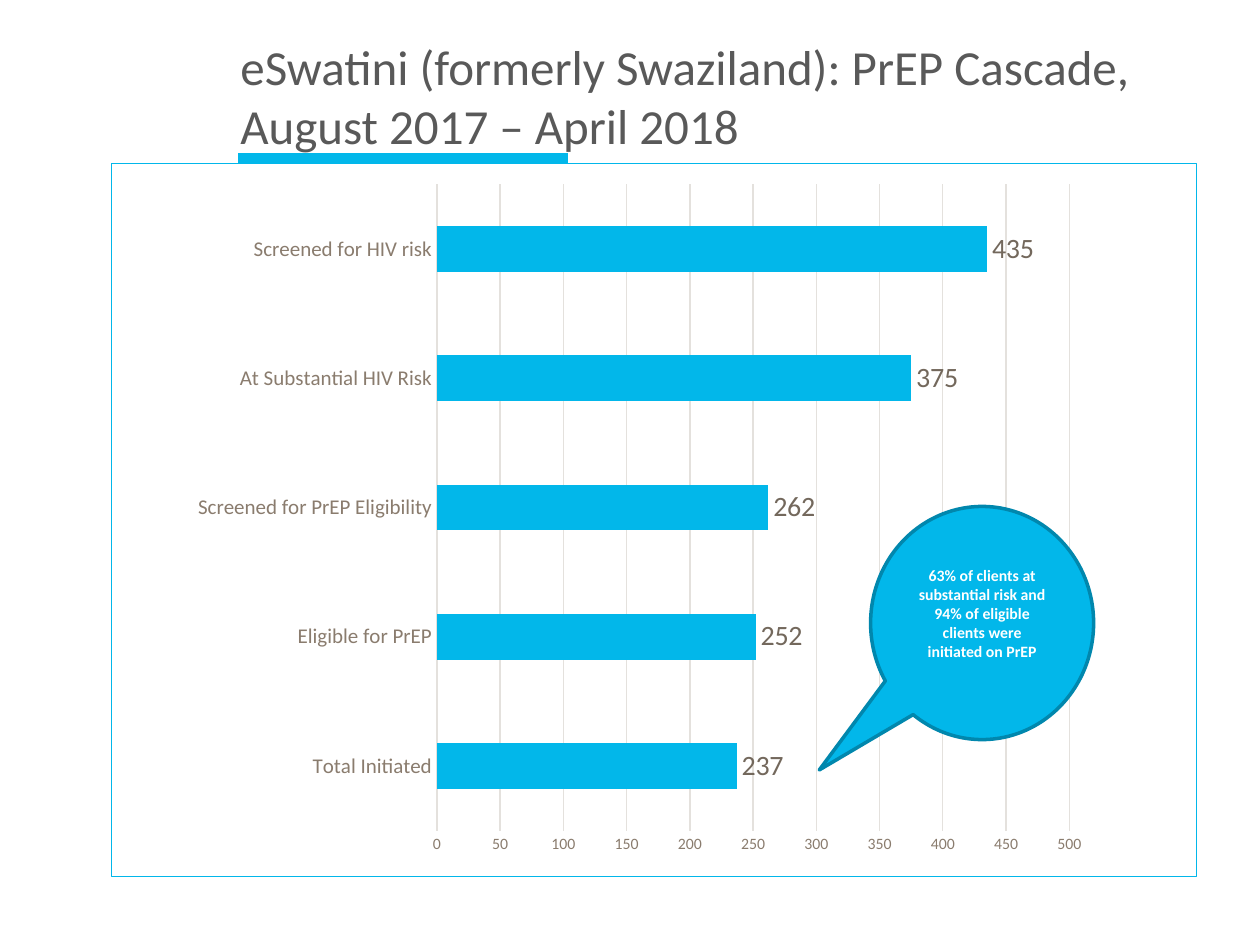
from dataclasses import dataclass

from lxml import etree
from pptx import Presentation
from pptx.chart.data import CategoryChartData
from pptx.dml.color import RGBColor
from pptx.enum.chart import XL_CHART_TYPE, XL_LABEL_POSITION, XL_TICK_MARK
from pptx.enum.shapes import MSO_CONNECTOR, MSO_SHAPE
from pptx.enum.text import MSO_ANCHOR, PP_ALIGN
from pptx.oxml import parse_xml
from pptx.oxml.ns import nsdecls, qn
from pptx.util import Inches, Pt

BARS = XL_CHART_TYPE.BAR_CLUSTERED
OUTER = XL_LABEL_POSITION.OUTSIDE_END
NO_TICK = XL_TICK_MARK.NONE
STRAIGHT = MSO_CONNECTOR.STRAIGHT
BUBBLE = MSO_SHAPE.OVAL_CALLOUT
MIDDLE = MSO_ANCHOR.MIDDLE
LEFT, CENTER = PP_ALIGN.LEFT, PP_ALIGN.CENTER

WIDE, HIGH = Inches(10), Inches(7.5)
FONT = "Calibri"
HEX = {"blue": "02B7EA", "edge": "0187AD", "grid": "E4E1DD", "axis": "8A7C6E",
       "label": "73685C", "dark": "3B352F", "title": "595959", "white": "FFFFFF"}


@dataclass
class Box:
    """Place and size in percent of the slide."""
    x: float
    y: float
    w: float
    h: float

    def emu(self) -> tuple[int, ...]:
        return tuple(round(part * side / 100) for part, side in
                     zip((self.x, self.y, self.w, self.h), (WIDE, HIGH) * 2))


@dataclass
class Step:
    name: str
    count: int


STEPS = [
    Step("Total Initiated", 237),
    Step("Eligible for PrEP", 252),
    Step("Screened for PrEP Eligibility", 262),
    Step("At Substantial HIV Risk", 375),
    Step("Screened for HIV risk", 435),
]


def color(name: str) -> RGBColor:
    return RGBColor.from_string(HEX[name])


def style(font, size: float, tone: str, bold: bool = False) -> None:
    font.name, font.size, font.bold = FONT, Pt(size), bold
    font.color.rgb = color(tone)


def stroke(line, tone: str, width: float) -> None:
    line.color.rgb = color(tone)
    line.width = Pt(width)


def write(shape, *lines: str, size: float, tone: str, bold: bool = False,
          align=LEFT, foot: float = 0.05) -> None:
    frame = shape.text_frame
    frame.word_wrap = True
    frame.vertical_anchor = MIDDLE
    frame.margin_bottom = Inches(foot)
    for i, line in enumerate(lines):
        para = frame.add_paragraph() if i else frame.paragraphs[0]
        para.alignment = align
        run = para.add_run()
        run.text = line
        style(run.font, size, tone, bold)


def draw_rule(slide, box: Box) -> None:
    x, y, w, h = box.emu()
    rule = slide.shapes.add_connector(STRAIGHT, x, y, x + w, y + h)
    stroke(rule.line, "blue", 6)
    etree.SubElement(rule._element.spPr, qn("a:effectLst"))


def set_plot(chart, box: Box) -> None:
    """Fix the inner plot area, in percent of the chart."""
    area = chart._chartSpace.chart.plotArea
    for old in area.findall(qn("c:layout")):
        area.remove(old)
    parts = "".join(f'<c:{key} val="{val / 100:.3f}"/>' for key, val in
                    zip("xywh", (box.x, box.y, box.w, box.h)))
    area.insert(0, parse_xml(
        f'<c:layout {nsdecls("c")}><c:manualLayout><c:layoutTarget val="inner"/>'
        f'<c:xMode val="edge"/><c:yMode val="edge"/>{parts}'
        '</c:manualLayout></c:layout>'))


def set_frame(chart, tone: str, width: float) -> None:
    """Outline the chart."""
    chart._chartSpace.chart.addnext(parse_xml(
        f'<c:spPr {nsdecls("c", "a")}><a:noFill/><a:ln w="{Pt(width)}"><a:solidFill>'
        f'<a:srgbClr val="{HEX[tone]}"/></a:solidFill></a:ln></c:spPr>'))


def draw_chart(slide, box: Box, steps: list[Step]) -> None:
    data = CategoryChartData()
    data.categories = [step.name for step in steps]
    data.add_series("Series 1", [step.count for step in steps])
    chart = slide.shapes.add_chart(BARS, *box.emu(), data).chart
    chart.has_legend = chart.has_title = False
    style(chart.font, 10, "dark")
    set_plot(chart, Box(30, 3, 58.3, 90.6))
    set_frame(chart, "blue", 0.75)

    # Bars and their values
    plot = chart.plots[0]
    plot.gap_width = 182
    plot.vary_by_categories = False
    fill = plot.series[0].format.fill
    fill.solid()
    fill.fore_color.rgb = color("blue")
    plot.has_data_labels = True
    tags = plot.data_labels
    tags.show_value = True
    tags.position = OUTER
    style(tags.font, 16, "label")

    # Axes
    cats, vals = chart.category_axis, chart.value_axis
    for axis, size in ((cats, 12), (vals, 9)):
        axis.major_tick_mark = axis.minor_tick_mark = NO_TICK
        style(axis.tick_labels.font, size, "axis")
    cats.has_major_gridlines = False
    stroke(cats.format.line, "grid", 0.75)
    vals.minimum_scale, vals.maximum_scale, vals.major_unit = 0, 500, 50
    vals.format.line.fill.background()
    stroke(vals.major_gridlines.format.line, "grid", 0.75)


def draw_bubble(slide, box: Box, tip: tuple[float, float]):
    shape = slide.shapes.add_shape(BUBBLE, *box.emu())
    shape.adjustments[0], shape.adjustments[1] = tip
    shape.shadow.inherit = False
    shape.fill.solid()
    shape.fill.fore_color.rgb = color("blue")
    stroke(shape.line, "edge", 2)
    return shape


def main() -> None:
    deck = Presentation()
    deck.slide_width, deck.slide_height = WIDE, HIGH
    slide = deck.slides.add_slide(deck.slide_layouts[6])

    # Rule under the title, then the cascade
    draw_rule(slide, Box(18.9, 16.8, 26.2, 0))
    draw_chart(slide, Box(8.8, 17.2, 86.2, 75.6), STEPS)

    # Title
    title = slide.shapes.add_textbox(*Box(18.1, 3.07, 76.9, 14.13).emu())
    write(title, "eSwatini (formerly Swaziland): PrEP Cascade, August 2017 – April 2018",
          size=28, tone="title")

    # Callout on the last step
    note = draw_bubble(slide, Box(69.1, 53.6, 17.7, 24.67), (-0.73, 0.63))
    write(note, "63% of clients at substantial risk and",
          "94% of eligible clients were initiated on PrEP",
          size=9, tone="white", bold=True, align=CENTER, foot=0.2)

    deck.save("out.pptx")


if __name__ == "__main__":
    main()
